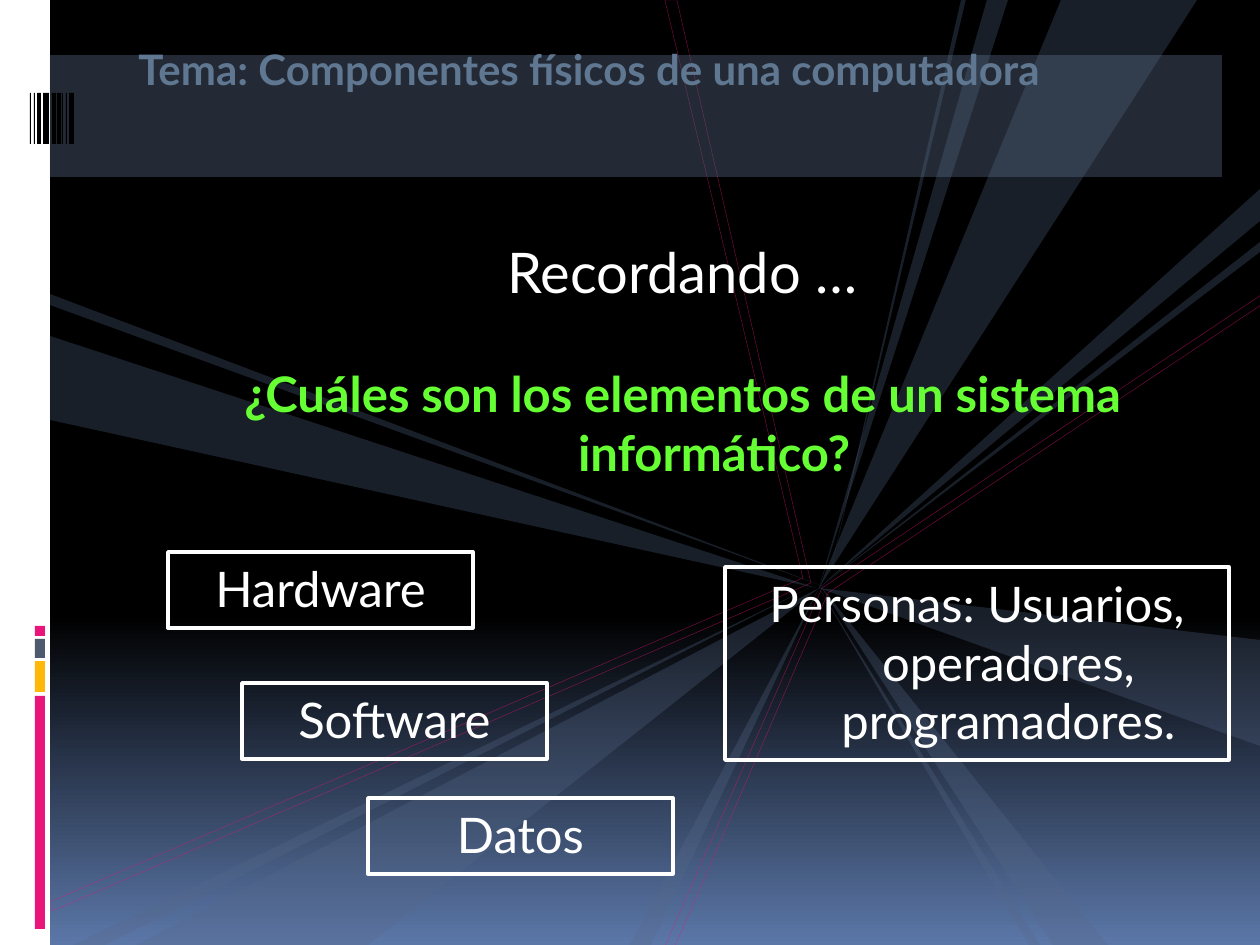
from lxml import etree
from pptx import Presentation
from pptx.dml.color import RGBColor
from pptx.enum.shapes import MSO_SHAPE
from pptx.enum.text import MSO_ANCHOR, PP_ALIGN
from pptx.oxml.ns import qn
from pptx.util import Emu, Pt

RECTANGLE = MSO_SHAPE.RECTANGLE
TOP = MSO_ANCHOR.TOP
LEFT, CENTER = PP_ALIGN.LEFT, PP_ALIGN.CENTER

PX = 914400 / 126
WIDTH, HEIGHT = 1260, 945
FONT = "Lato"
WHITE, BLACK, PINK, RAY = "FFFFFF", "000000", "EA157A", "566989"

# Texts: content, box, format
TITLE = ("Tema: Componentes físicos de una computadora", (126, 37, 1051, 63))
QUESTION = ("¿Cuáles son los elementos de un sistema informático?", (126, 357, 1113, 130))
REMINDER = ("Recordando …", (126, 231, 1113, 79))
ELEMENTS = [
    ("Hardware", (168, 552, 305, 76)),
    ("Software", (242, 683, 305, 76)),
    ("Datos", (368, 798, 305, 76)),
    ("Personas: Usuarios, operadores, programadores.", (725, 567, 504, 193)),
]

# Side strip: top, height, colour
STRIP_MARKS = [(696, 233, PINK), (661, 31, "FEB80A"), (639, 19, "4E5B6F"), (626, 10, PINK)]

# Barcode: left, width
BARS = [(30, 1), (34, 1), (37, 4), (43, 6), (52, 4), (57, 4), (62, 1), (66, 1), (69, 5)]
BAR_TOP, BAR_HEIGHT = 93, 51

# Thin outlines that meet at the hub
OUTLINES = [
    [(665, 946), (822, 588), (1261, 295), (1261, 305), (828, 593), (675, 946)],
    [(52, 901), (52, 911), (811, 583), (677, 0), (665, 0), (803, 578)],
]

# Rays: tip first, then the two far corners
HUB = (819, 588)
RAYS = [
    [(830, 573), (961, 0), (966, -1)],
    [HUB, (1061, 0), (1197, 0)],
    [HUB, (1260, 640), (1260, 746)],
    [HUB, (987, 0), (1008, 0)],
    [(820, 585), (1053, 945), (1108, 945)],
    [HUB, (1029, 945), (1040, 945)],
    [HUB, (1260, 189), (1260, 221)],
    [HUB, (1260, 242), (1260, 252)],
    [HUB, (136, 945), (368, 945)],
    [(809, 588), (73, 945), (105, 945)],
    [(816, 588), (50, 336), (50, 420)],
    [(828, 588), (50, 294), (50, 305)],
    [HUB, (630, 945), (651, 945)],
]


def px(value):
    return Emu(round(value * PX))


def rgb(color):
    return RGBColor.from_string(color)


def paint(fill, color, alpha=100):
    fill.solid()
    fill.fore_color.rgb = rgb(color)
    if alpha < 100:
        color_node = fill._xPr.find(qn("a:solidFill"))[0]
        etree.SubElement(color_node, qn("a:alpha")).set("val", str(alpha * 1000))


def add_block(slide, box, color, alpha=100):
    block = slide.shapes.add_shape(RECTANGLE, *map(px, box))
    block.shadow.inherit = False
    paint(block.fill, color, alpha)
    block.line.fill.background()


def add_polygon(slide, points):
    builder = slide.shapes.build_freeform(*points[0], scale=PX)
    builder.add_line_segments(points[1:], close=True)
    polygon = builder.convert_to_shape()
    polygon.shadow.inherit = False
    return polygon


def write(holder, text, size, color=WHITE, bold=False, align=CENTER, hanging=False):
    frame = holder.text_frame
    frame.word_wrap = True
    frame.vertical_anchor = TOP
    paragraph = frame.paragraphs[0]
    paragraph.alignment = align
    if hanging:
        properties = paragraph._p.get_or_add_pPr()
        properties.set("marL", str(px(63)))
        properties.set("indent", str(px(-63)))
    run = paragraph.add_run()
    run.text = text
    run.font.name = FONT
    run.font.size = Pt(size)
    run.font.bold = bold
    run.font.color.rgb = rgb(color)


def add_text(slide, content, **text_format):
    text, box = content
    write(slide.shapes.add_textbox(*map(px, box)), text, **text_format)


def add_element(slide, text, box):
    element = slide.shapes.add_shape(RECTANGLE, *map(px, box))
    element.shadow.inherit = False
    element.fill.background()
    element.line.color.rgb = rgb(WHITE)
    element.line.width = Pt(2)
    write(element, text, size=28, hanging=True)


def main():
    deck = Presentation()
    deck.slide_width, deck.slide_height = px(WIDTH), px(HEIGHT)
    slide = deck.slides.add_slide(deck.slide_layouts[6])

    # Background, black fading to blue at the bottom
    backdrop = slide.background.fill
    backdrop.gradient()
    backdrop.gradient_angle = 270
    for stop, (position, color) in zip(backdrop.gradient_stops, [(0.65, BLACK), (1, "5B77A8")]):
        stop.position = position
        stop.color.rgb = rgb(color)

    # Side strip
    add_block(slide, (0, 0, 50, HEIGHT), WHITE)
    for top, height, color in STRIP_MARKS:
        add_block(slide, (35, top, 10, height), color)

    # Outlines and rays
    for points in OUTLINES:
        outline = add_polygon(slide, points)
        outline.fill.background()
        outline.line.width = Pt(0.25)
        paint(outline.line.fill, PINK, 53)
    for points in RAYS:
        ray = add_polygon(slide, points)
        paint(ray.fill, RAY, 30)
        ray.line.fill.background()

    # Title band and barcode
    add_block(slide, (50, 55, 1172, 122), "586A86", 40)
    for left, width in BARS:
        add_block(slide, (left, BAR_TOP, width, BAR_HEIGHT), BLACK)

    # Texts
    add_text(slide, TITLE, size=24, color="5F7791", bold=True, align=LEFT)
    add_text(slide, QUESTION, size=28, color="66FF33", bold=True, hanging=True)
    add_text(slide, REMINDER, size=32)
    for text, box in ELEMENTS:
        add_element(slide, text, box)

    deck.save("out.pptx")


if __name__ == "__main__":
    main()
